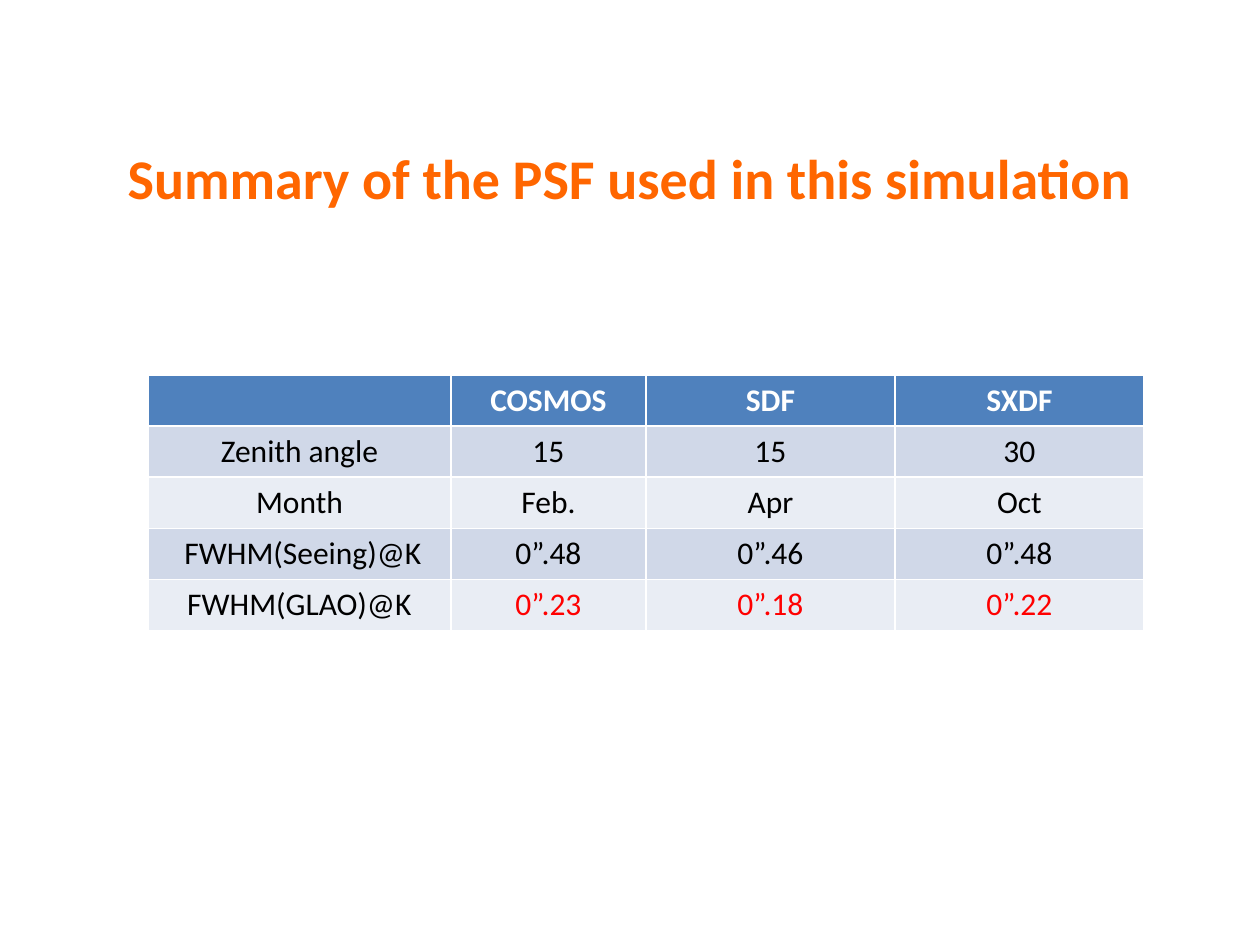
from pptx import Presentation
from pptx.dml.color import RGBColor
from pptx.enum.text import MSO_ANCHOR, PP_ALIGN
from pptx.util import Pt

SCALE = 914400 / 126
FONT = "Calibri"
ORANGE = RGBColor(0xFF, 0x66, 0x00)
BLUE = RGBColor(0x4F, 0x81, 0xBD)
BANDS = RGBColor(0xE9, 0xED, 0xF4), RGBColor(0xD0, 0xD8, 0xE8)
WHITE = RGBColor(0xFF, 0xFF, 0xFF)
BLACK = RGBColor(0x00, 0x00, 0x00)
RED = RGBColor(0xFF, 0x00, 0x00)

ROWS = [
    ["", "COSMOS", "SDF", "SXDF"],
    ["Zenith angle", "15", "15", "30"],
    ["Month", "Feb.", "Apr", "Oct"],
    [" FWHM(Seeing)@K", "0”.48", "0”.46", "0”.48"],
    ["FWHM(GLAO)@K", "0”.23", "0”.18", "0”.22"],
]


def emu(px):
    return round(px * SCALE)


class Deck:
    def __init__(self, wide, high):
        self.deck = Presentation()
        self.deck.slide_width, self.deck.slide_height = emu(wide), emu(high)
        self.slide = self.deck.slides.add_slide(self.deck.slide_layouts[5])

    def label(self, frame, text, size, color, bold):
        frame.text = text
        for para in frame.paragraphs:
            para.alignment = PP_ALIGN.CENTER
            for run in para.runs:
                font = run.font
                font.name, font.size, font.bold = FONT, Pt(size), bold
                font.color.rgb = color

    def title(self, text, left, top, width, height):
        box = self.slide.shapes.title
        box.left, box.top = emu(left), emu(top)
        box.width, box.height = emu(width), emu(height)
        box.text_frame.vertical_anchor = MSO_ANCHOR.MIDDLE
        self.label(box.text_frame, text, 32, ORANGE, True)

    def table(self, rows, left, top, widths, height):
        table = self.slide.shapes.add_table(
            len(rows), len(widths), emu(left), emu(top),
            emu(sum(widths)), emu(height * len(rows))).table
        for column, width in zip(table.columns, widths):
            column.width = emu(width)
        for i, row in enumerate(rows):
            head, last = i == 0, i == len(rows) - 1
            for j, text in enumerate(row):
                cell = table.cell(i, j)
                cell.fill.solid()
                cell.fill.fore_color.rgb = BLUE if head else BANDS[i % 2]
                color = WHITE if head else RED if last and j else BLACK
                self.label(cell.text_frame, text, 18, color, head)


def main():
    page = Deck(1260, 945)
    page.title("Summary of the PSF used in this simulation", 63, 98, 1134, 158)
    page.table(ROWS, 148, 375, [303, 195, 249, 249], 51)
    page.deck.save("out.pptx")


if __name__ == "__main__":
    main()
